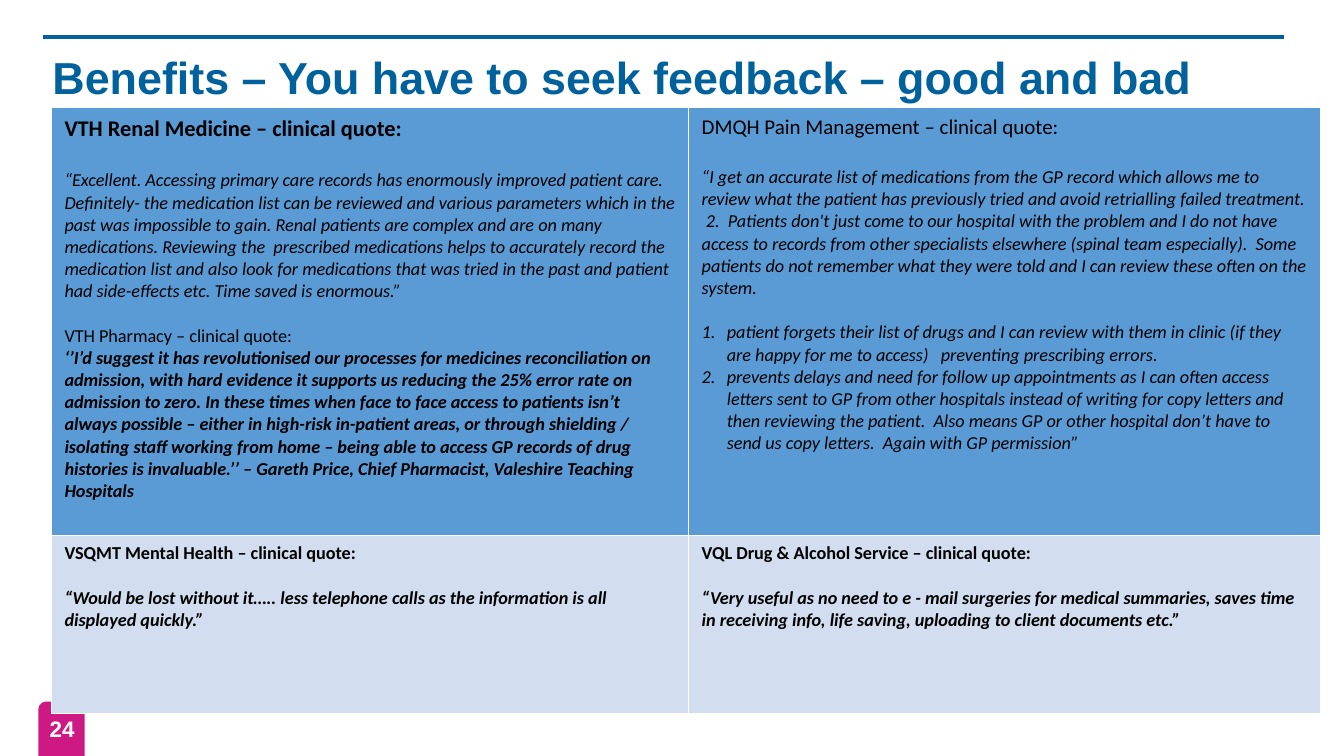
import pptx
import pptx.dml.color
import pptx.enum.shapes
import pptx.enum.text
import pptx.oxml.ns
import pptx.util
import lxml.etree

Inches = pptx.util.Inches
Pt = pptx.util.Pt
BLUE, PINK, WHITE, BLACK = "00619D", "CE1884", "FFFFFF", "000000"
LINE_HEIGHT = 1.22

# Each paragraph: text, size, style (b bold, i italic, n numbered),
# and the size of the empty line above it (0 for none).
QUOTES = [
    [
        [
            ("VTH Renal Medicine – clinical quote:", 16, "b", 0),
            ("“Excellent. Accessing primary care records has enormously improved patient care.  "
             "Definitely- the medication list can be reviewed and various parameters which in the "
             "past was impossible to gain. Renal patients are complex and are on many medications. "
             "Reviewing the  prescribed medications helps to accurately record the medication list "
             "and also look for medications that was tried in the past and patient had side-effects "
             "etc. Time saved is enormous.”", 13, "i", 16),
            ("VTH Pharmacy – clinical quote:", 13, "", 13),
            ("‘’I’d suggest it has revolutionised our processes for medicines reconciliation on "
             "admission, with hard evidence it supports us reducing the 25% error rate on admission "
             "to zero. In these times when face to face access to patients isn’t always possible – "
             "either in high-risk in-patient areas, or through shielding / isolating staff working "
             "from home – being able to access GP records of drug histories is invaluable.’’ – "
             "Gareth Price, Chief Pharmacist, Valeshire Teaching Hospitals", 13, "bi", 0),
        ],
        [
            ("DMQH Pain Management – clinical quote:", 15, "", 0),
            ("“I get an accurate list of medications from the GP record which allows me to review "
             "what the patient has previously tried and avoid retrialling failed treatment.  2.  "
             "Patients don't just come to our hospital with the problem and I do not have access to "
             "records from other specialists elsewhere (spinal team especially).  Some patients do "
             "not remember what they were told and I can review these often on the system.",
             13, "i", 15),
            ("patient forgets their list of drugs and I can review with them in clinic (if they are "
             "happy for me to access)   preventing prescribing errors.", 13, "in", 13),
            ("prevents delays and need for follow up appointments as I can often access letters "
             "sent to GP from other hospitals instead of writing for copy letters and then "
             "reviewing the patient.  Also means GP or other hospital don’t have to send us copy "
             "letters.  Again with GP permission”", 13, "in", 0),
        ],
    ],
    [
        [
            ("VSQMT Mental Health – clinical quote:", 13, "b", 0),
            ("“Would be lost without it….. less telephone calls as the information is all displayed "
             "quickly.”", 13, "bi", 13),
        ],
        [
            ("VQL Drug & Alcohol Service – clinical quote:", 13, "b", 0),
            ("“Very useful as no need to e - mail surgeries for medical summaries, saves time in "
             "receiving info, life saving, uploading to client documents etc.”", 13, "bi", 13),
        ],
    ],
]
ROW_FILLS = ["5B9BD5", "D2DEEF"]


def color(value):
    return pptx.dml.color.RGBColor.from_string(value)


def add_element(parent, tag, **attributes):
    return lxml.etree.SubElement(parent, pptx.oxml.ns.qn(tag), attributes)


def add_run(paragraph, text, size, font, text_color, bold=True, italic=False):
    run = paragraph.add_run()
    run.text = text
    run.font.size = Pt(size)
    run.font.name = font
    run.font.bold = bold
    run.font.italic = italic
    run.font.color.rgb = color(text_color)


def add_top_rule(slide, left, top, width):
    rule = slide.shapes.add_connector(
        pptx.enum.shapes.MSO_CONNECTOR.STRAIGHT,
        Inches(left), Inches(top), Inches(left + width), Inches(top))
    rule.line.color.rgb = color(BLUE)
    rule.line.width = Pt(3)
    add_element(rule._element.spPr, "a:effectLst")


def set_title(slide, left, top, width, height, text):
    title = slide.shapes.title
    title.left, title.top = Inches(left), Inches(top)
    title.width, title.height = Inches(width), Inches(height)
    frame = title.text_frame
    frame.auto_size = pptx.enum.text.MSO_AUTO_SIZE.NONE
    frame.vertical_anchor = pptx.enum.text.MSO_ANCHOR.MIDDLE
    paragraph = frame.paragraphs[0]
    paragraph.alignment = pptx.enum.text.PP_ALIGN.LEFT
    paragraph.line_spacing = 0.9
    add_run(paragraph, text, 32, "Arial", BLUE)


def add_page_tab(slide, left, top, width, height):
    tab = slide.shapes.add_shape(
        pptx.enum.shapes.MSO_SHAPE.ROUND_2_SAME_RECTANGLE,
        Inches(left), Inches(top), Inches(width), Inches(height))
    tab.shadow.inherit = False
    tab.adjustments[0] = 0.17
    tab.fill.solid()
    tab.fill.fore_color.rgb = color(PINK)
    tab.line.fill.background()


def add_page_number(slide, left, top, width, height, number):
    box = slide.shapes.add_textbox(Inches(left), Inches(top), Inches(width), Inches(height))
    frame = box.text_frame
    frame.word_wrap = True
    frame.margin_left = frame.margin_right = frame.margin_top = frame.margin_bottom = 0
    frame.vertical_anchor = pptx.enum.text.MSO_ANCHOR.MIDDLE
    frame.paragraphs[0].alignment = pptx.enum.text.PP_ALIGN.CENTER
    add_run(frame.paragraphs[0], number, 16, "Arial", WHITE)


def format_cell(cell, fill):
    cell.margin_left = cell.margin_right = Inches(0.13)
    cell.margin_top = cell.margin_bottom = Inches(0.07)
    cell.fill.solid()
    cell.fill.fore_color.rgb = color(fill)
    properties = cell._tc.get_or_add_tcPr()
    for position, side in enumerate(["a:lnL", "a:lnR", "a:lnT", "a:lnB"]):
        border = add_element(properties, side, w=str(Pt(1)))
        add_element(add_element(border, "a:solidFill"), "a:srgbClr", val=WHITE)
        properties.insert(position, border)


def fill_quote(cell, paragraphs):
    frame = cell.text_frame
    for index, (text, size, style, gap) in enumerate(paragraphs):
        paragraph = frame.add_paragraph() if index else frame.paragraphs[0]
        paragraph.space_before = Pt(round(gap * LINE_HEIGHT, 1))
        if "n" in style:
            properties = paragraph._p.get_or_add_pPr()
            properties.set("marL", str(Inches(0.25)))
            properties.set("indent", str(Inches(-0.25)))
            add_element(properties, "a:buFont", typeface="+mj-lt")
            add_element(properties, "a:buAutoNum", type="arabicPeriod")
        add_run(paragraph, text, size, "Calibri", BLACK, "b" in style, "i" in style)


def add_quote_table(slide, left, top, column_widths, row_heights):
    table = slide.shapes.add_table(
        len(row_heights), len(column_widths), Inches(left), Inches(top),
        Inches(sum(column_widths)), Inches(sum(row_heights))).table
    table.first_row = table.horz_banding = False
    for column, width in zip(table.columns, column_widths):
        column.width = Inches(width)
    for row, height, fill, quotes in zip(table.rows, row_heights, ROW_FILLS, QUOTES):
        row.height = Inches(height)
        for cell, paragraphs in zip(row.cells, quotes):
            format_cell(cell, fill)
            fill_quote(cell, paragraphs)


def main():
    presentation = pptx.Presentation()
    presentation.slide_width, presentation.slide_height = Inches(13.33), Inches(7.5)
    slide = presentation.slides.add_slide(presentation.slide_layouts.get_by_name("Title Only"))
    add_top_rule(slide, 0.43, 0.37, 12.3)
    add_page_tab(slide, 0.38, 6.96, 0.46, 0.54)
    add_quote_table(slide, 0.51, 1.07, [6.32, 6.27], [4.24, 1.77])
    set_title(slide, 0.42, -0.44, 12.68, 2.46,
              "Benefits – You have to seek feedback – good and bad")
    add_page_number(slide, 0.42, 7.08, 0.39, 0.3, "24")
    presentation.save("out.pptx")


if __name__ == "__main__":
    main()
